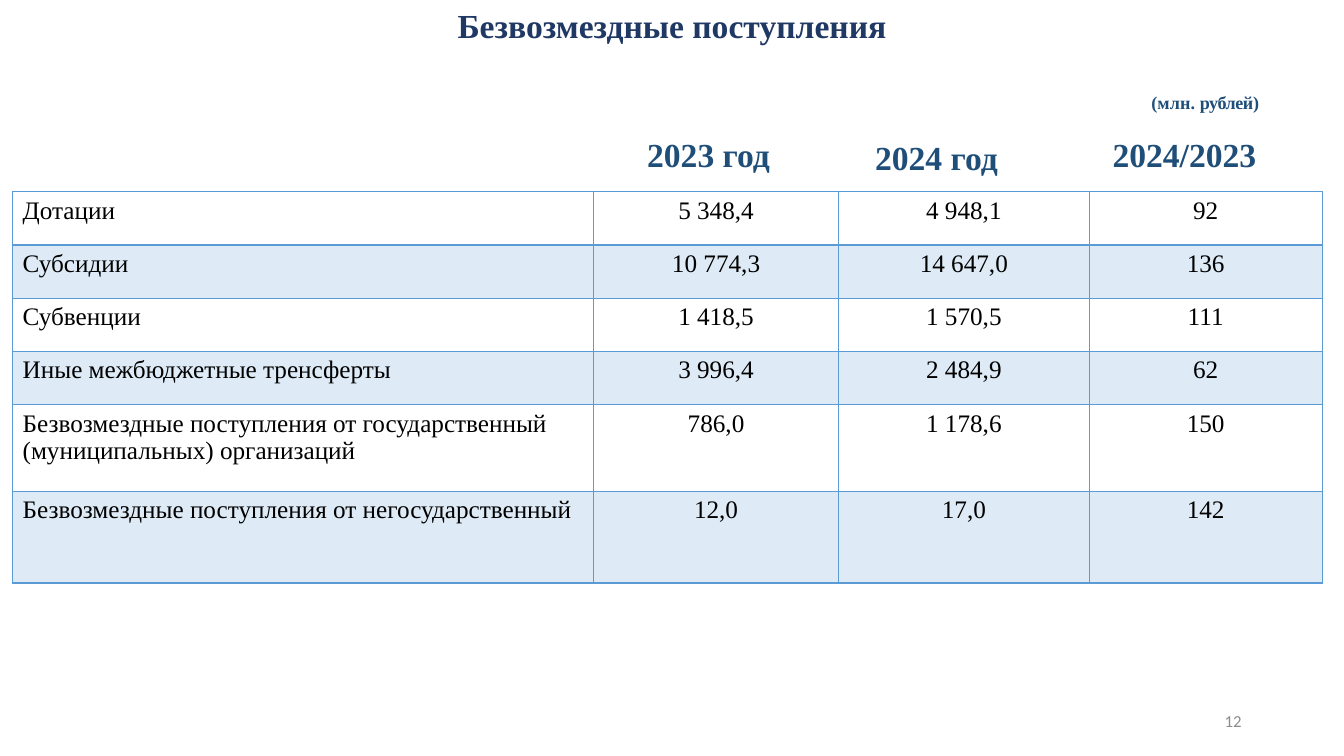
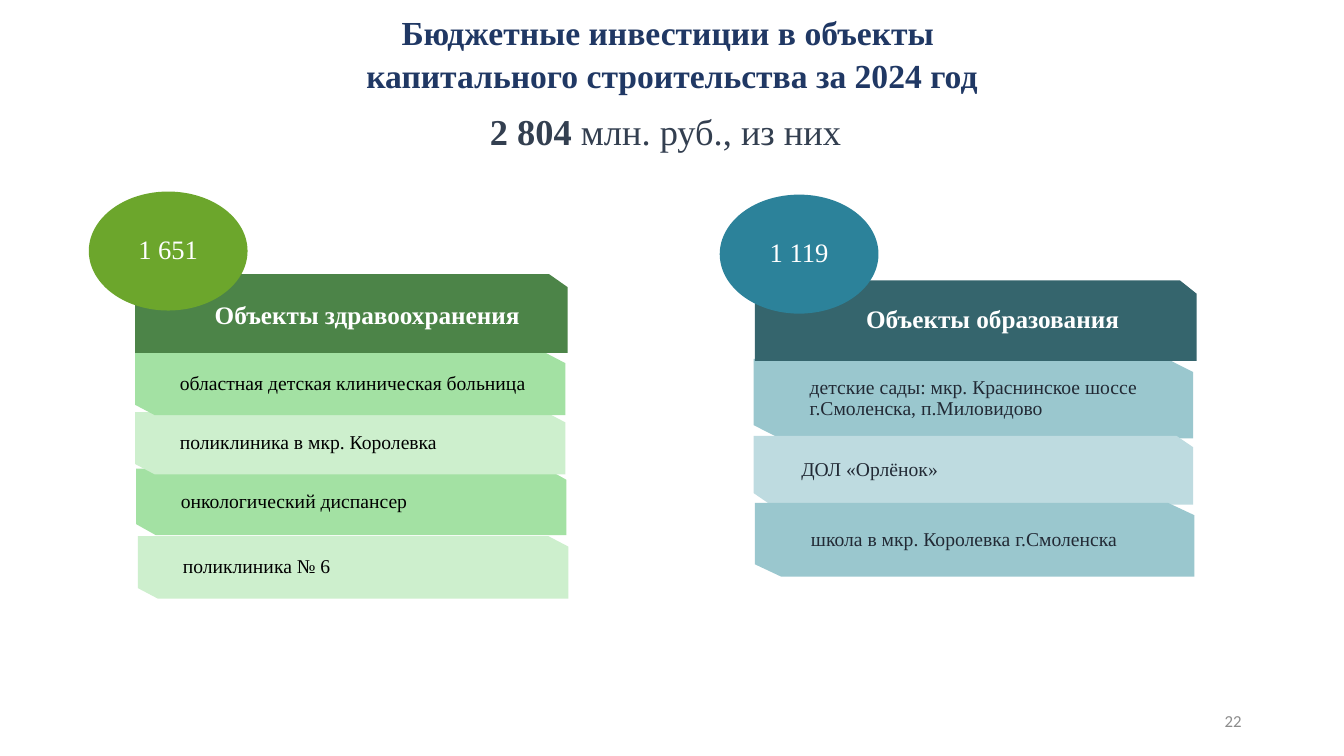
from dataclasses import dataclass
from typing import NamedTuple

from lxml.etree import SubElement
from pptx import Presentation
from pptx.dml.color import RGBColor
from pptx.enum.shapes import MSO_SHAPE as Preset
from pptx.enum.text import MSO_ANCHOR as Anchor, PP_ALIGN as Align
from pptx.oxml.ns import qn
from pptx.util import Pt

SERIF = "Times New Roman"
SANS = "Calibri"
WHITE = RGBColor(0xFF, 0xFF, 0xFF)
BLACK = RGBColor(0x00, 0x00, 0x00)
TITLE_NAVY = RGBColor(0x20, 0x38, 0x64)
HEADING_BLUE = RGBColor(0x1F, 0x4E, 0x79)
TOTAL_SLATE = RGBColor(0x33, 0x3F, 0x50)
NUMBER_GRAY = RGBColor(0x8C, 0x8C, 0x8C)
BORDER_BLUE = RGBColor(0x5B, 0x9B, 0xD5)
BAND_BLUE = RGBColor(0xDE, 0xEB, 0xF7)
GREEN_OVAL = RGBColor(0x6C, 0xA6, 0x2C)
GREEN_DARK = RGBColor(0x4C, 0x84, 0x48)
GREEN_MID = RGBColor(0xA3, 0xE1, 0xA3)
GREEN_PALE = RGBColor(0xCD, 0xEF, 0xCD)
TEAL_OVAL = RGBColor(0x2C, 0x82, 0x9A)
TEAL_DARK = RGBColor(0x35, 0x65, 0x6D)
TEAL_MID = RGBColor(0x9A, 0xC7, 0xCE)
TEAL_PALE = RGBColor(0xBE, 0xDB, 0xE0)
TEAL_TEXT = RGBColor(0x22, 0x2A, 0x35)

SLIDE_WIDTH, SLIDE_HEIGHT = 960, 540


class Box(NamedTuple):
    left: float
    top: float
    width: float
    height: float

    def lengths(self) -> list:
        return [Pt(value) for value in self]


class Insets(NamedTuple):
    left: float = 7.2
    top: float = 3.6
    right: float = 7.2
    bottom: float = 3.6


@dataclass(frozen=True)
class Words:
    text: str
    size: float
    color: RGBColor
    bold: bool = False
    font: str = SERIF
    spacing: float = 0


@dataclass(frozen=True)
class Bar:
    label: str
    box: Box
    fill: RGBColor
    snip: float
    insets: Insets


@dataclass(frozen=True)
class Sector:
    """An amount in an oval, a header bar and the bars of its sites, in drawing order."""
    amount: str
    oval: Box
    oval_fill: RGBColor
    header: Bar
    sites: list
    site_color: RGBColor


NO_INSETS = Insets(0, 0, 0, 0)
GREEN_INSETS = Insets(32, 8.6, 8.6, 8.6)
TEAL_INSETS = Insets(40, 15, 15, 15)

GRANTS = [
    ("Дотации", "5 348,4", "4 948,1", "92"),
    ("Субсидии", "10 774,3", "14 647,0", "136"),
    ("Субвенции", "1 418,5", "1 570,5", "111"),
    ("Иные межбюджетные тренсферты", "3 996,4", "2 484,9", "62"),
    ("Безвозмездные поступления от государственный (муниципальных) организаций",
     "786,0", "1 178,6", "150"),
    ("Безвозмездные поступления от негосударственный", "12,0", "17,0", "142"),
]
COLUMN_WIDTHS = (415, 175, 179, 166.5)
ROW_HEIGHTS = (38, 38, 38, 38, 62, 65.5)
COLUMN_HEADINGS = [("2023 год", 440.6, 92.2), ("2024 год", 603.4, 94.3),
                   ("2024/2023", 780.5, 92.2)]

HEALTH = Sector(
    "1 651", Box(63.4, 136.8, 113.4, 85), GREEN_OVAL,
    Bar("Объекты здравоохранения", Box(96.5, 195.8, 309, 56.2), GREEN_DARK, 13.3,
        Insets(37, 14.4, 14.4, 10)),
    [
        Bar("поликлиника № 6", Box(98.6, 383, 307.4, 44.6),
            GREEN_PALE, 14.2, GREEN_INSETS),
        Bar("онкологический диспансер", Box(97.2, 334.8, 307.4, 47.5),
            GREEN_MID, 14.2, GREEN_INSETS),
        Bar("поликлиника в мкр. Королевка", Box(96.5, 294.3, 307.4, 44.6),
            GREEN_PALE, 14.2, GREEN_INSETS),
        Bar("областная детская клиническая больница", Box(96.5, 252, 307.4, 44.6),
            GREEN_MID, 14.2, GREEN_INSETS),
    ],
    BLACK,
)
EDUCATION = Sector(
    "1 119", Box(514.1, 139, 113.4, 85), TEAL_OVAL,
    Bar("Объекты образования", Box(539.3, 200.2, 315.4, 57.6), TEAL_DARK, 12,
        Insets(34, 10, 10, 10)),
    [
        Bar("детские сады: мкр. Краснинское шоссе г.Смоленска, п.Миловидово",
            Box(538.4, 256.3, 313.9, 56.9), TEAL_MID, 18.7, TEAL_INSETS),
        Bar("ДОЛ «Орлёнок»", Box(538.4, 311.3, 313.9, 49.2),
            TEAL_PALE, 12, Insets(34, 8.6, 8.6, 8.6)),
        Bar("школа в мкр. Королевка г.Смоленска", Box(539.3, 359.3, 313.9, 52.6),
            TEAL_MID, 18.7, TEAL_INSETS),
    ],
    TEAL_TEXT,
)


def add_words(paragraph, words: Words) -> None:
    run = paragraph.add_run()
    run.text = words.text
    run.font.name = words.font
    run.font.size = Pt(words.size)
    run.font.bold = words.bold
    run.font.color.rgb = words.color
    if words.spacing:
        run._r.get_or_add_rPr().set("spc", str(round(words.spacing * 100)))


def write(shape, lines: list, align=Align.CENTER, anchor=Anchor.TOP,
          insets: Insets = Insets(), line_spacing: float = 1, gap: float = 0) -> None:
    """Fill a shape with lines, each a list of Words."""
    frame = shape.text_frame
    frame.word_wrap = True
    frame.vertical_anchor = anchor
    frame.margin_left, frame.margin_top, frame.margin_right, frame.margin_bottom = (
        Pt(value) for value in insets)
    for index, line in enumerate(lines):
        paragraph = frame.add_paragraph() if index else frame.paragraphs[0]
        paragraph.alignment = align
        paragraph.line_spacing = line_spacing
        if index:
            paragraph.space_before = Pt(gap)
        for words in line:
            add_words(paragraph, words)


def add_text(slide, box: Box, lines: list, **layout) -> None:
    write(slide.shapes.add_textbox(*box.lengths()), lines, **layout)


def add_page(deck, title_box: Box, title: list, number: int, insets: Insets = Insets()):
    """Add a blank slide with the shared title style and slide number."""
    slide = deck.slides.add_slide(deck.slide_layouts[6])
    add_text(slide, title_box, [[Words(line, 24, TITLE_NAVY, True)] for line in title],
             insets=insets, gap=1.8)
    add_text(slide, Box(678, 500.5, 216, 28.75),
             [[Words(str(number), 12, NUMBER_GRAY, font=SANS)]],
             align=Align.RIGHT, anchor=Anchor.MIDDLE)
    return slide


def set_border(cell, side: str, width: float) -> None:
    line = SubElement(cell._tc.get_or_add_tcPr(), qn(f"a:{side}"), w=str(Pt(width)))
    fill = SubElement(line, qn("a:solidFill"))
    SubElement(fill, qn("a:srgbClr"), val=str(BORDER_BLUE))


def add_grants_table(slide) -> None:
    box = Box(9, 137, sum(COLUMN_WIDTHS), sum(ROW_HEIGHTS))
    table = slide.shapes.add_table(len(GRANTS), len(COLUMN_WIDTHS), *box.lengths()).table
    table.first_row = table.horz_banding = False
    for column, width in zip(table.columns, COLUMN_WIDTHS):
        column.width = Pt(width)
    for row_index, (values, height) in enumerate(zip(GRANTS, ROW_HEIGHTS)):
        table.rows[row_index].height = Pt(height)
        for column_index, value in enumerate(values):
            cell = table.cell(row_index, column_index)
            for side in ("lnL", "lnR", "lnT", "lnB"):
                set_border(cell, side, 2 if row_index == 0 and side == "lnB" else 1)
            cell.fill.solid()
            cell.fill.fore_color.rgb = BAND_BLUE if row_index % 2 else WHITE
            paragraph = cell.text_frame.paragraphs[0]
            paragraph.alignment = Align.CENTER if column_index else Align.LEFT
            add_words(paragraph, Words(value, 18, BLACK))


def paint(shape, color: RGBColor) -> None:
    shape.shadow.inherit = False
    shape.fill.solid()
    shape.fill.fore_color.rgb = color
    shape.line.fill.background()


def add_bar(slide, bar: Bar, words: Words, is_header: bool = False) -> None:
    """Draw a bar cut at the top right, and at the top left (header) or bottom left."""
    left, top, width, height = bar.box
    right, bottom = left + width, top + height
    cut = height / 6
    if is_header:
        left_edge = [(left, bottom), (left, top + cut), (left + bar.snip, top)]
    else:
        left_edge = [(left + bar.snip, bottom), (left, bottom - cut), (left, top)]
    start, *corners = [(right - bar.snip, top), (right, top + cut), (right, bottom),
                       *left_edge]
    builder = slide.shapes.build_freeform(Pt(start[0]), Pt(start[1]))
    builder.add_line_segments([(Pt(x), Pt(y)) for x, y in corners], close=True)
    shape = builder.convert_to_shape()
    paint(shape, bar.fill)
    write(shape, [[words]], align=Align.CENTER if is_header else Align.LEFT,
          anchor=Anchor.MIDDLE, insets=bar.insets, line_spacing=0.9)


def add_sector(slide, sector: Sector) -> None:
    for site in sector.sites:
        add_bar(slide, site, Words(site.label, 14, sector.site_color))
    add_bar(slide, sector.header, Words(sector.header.label, 18, WHITE, True),
            is_header=True)
    oval = slide.shapes.add_shape(Preset.OVAL, *sector.oval.lengths())
    paint(oval, sector.oval_fill)
    write(oval, [[Words(sector.amount, 19, WHITE)]], anchor=Anchor.MIDDLE,
          insets=NO_INSETS, line_spacing=0.9)


def add_grants_page(deck) -> None:
    slide = add_page(deck, Box(0, 0, SLIDE_WIDTH, 63), ["Безвозмездные поступления"], 12)
    unit = [Words(text, 12.9, HEADING_BLUE, True, spacing=spacing)
            for text, spacing in (("(млн. ", 0.1), ("рублей", -0.3), (")", 0.1))]
    add_text(slide, Box(769, 62, 137.5, 23), [unit], align=Align.RIGHT)
    for heading, left, top in COLUMN_HEADINGS:
        add_text(slide, Box(left, top, 131, 36), [[Words(heading, 24, HEADING_BLUE, True)]])
    add_grants_table(slide)


def add_investment_page(deck) -> None:
    slide = add_page(deck, Box(0, 8.6, SLIDE_WIDTH, 58.3),
                     ["Бюджетные инвестиции в объекты ",
                      "капитального строительства за 2024 год"], 22, NO_INSETS)
    add_text(slide, Box(226, 72, 499, 43),
             [[Words("2 804 ", 26, TOTAL_SLATE, True),
               Words("млн. руб., из них", 26, TOTAL_SLATE)]], anchor=Anchor.MIDDLE)
    for sector in (HEALTH, EDUCATION):
        add_sector(slide, sector)


def main() -> None:
    deck = Presentation()
    deck.slide_width, deck.slide_height = Pt(SLIDE_WIDTH), Pt(SLIDE_HEIGHT)
    add_grants_page(deck)
    add_investment_page(deck)
    deck.save("out.pptx")


if __name__ == "__main__":
    main()
